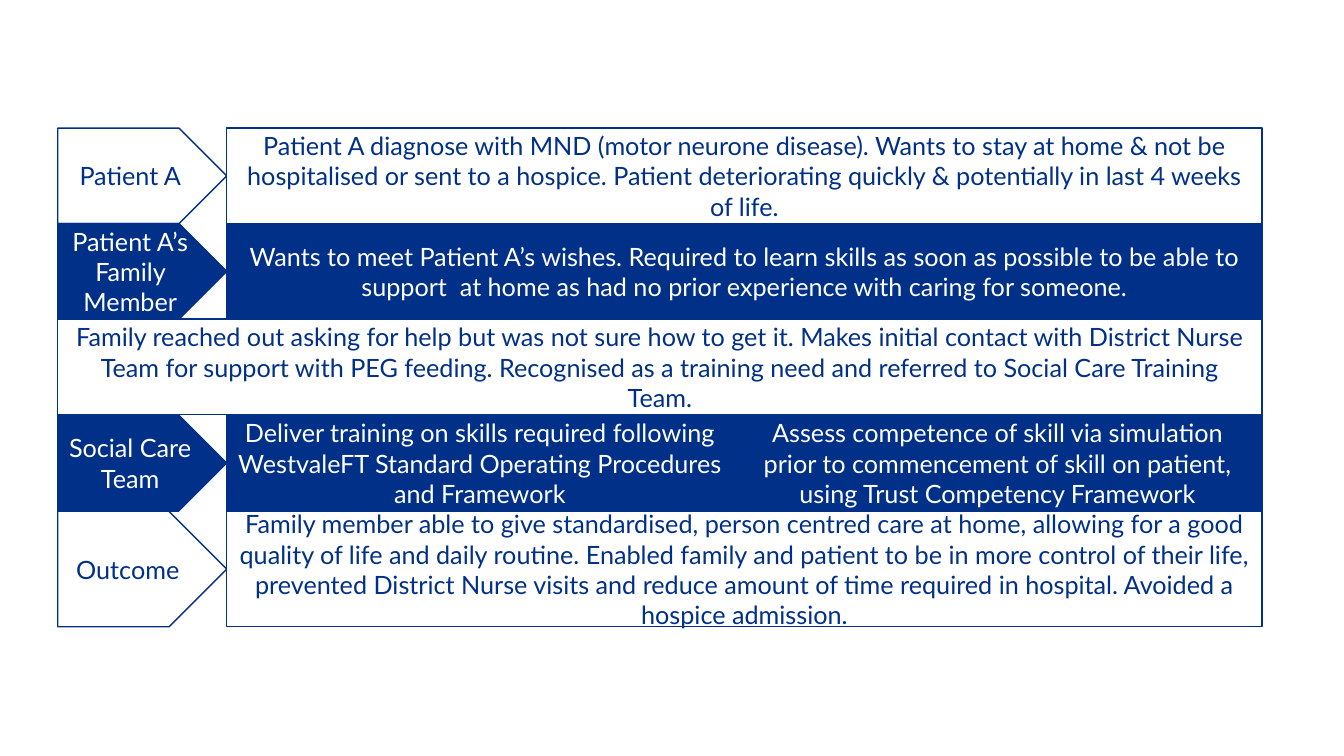
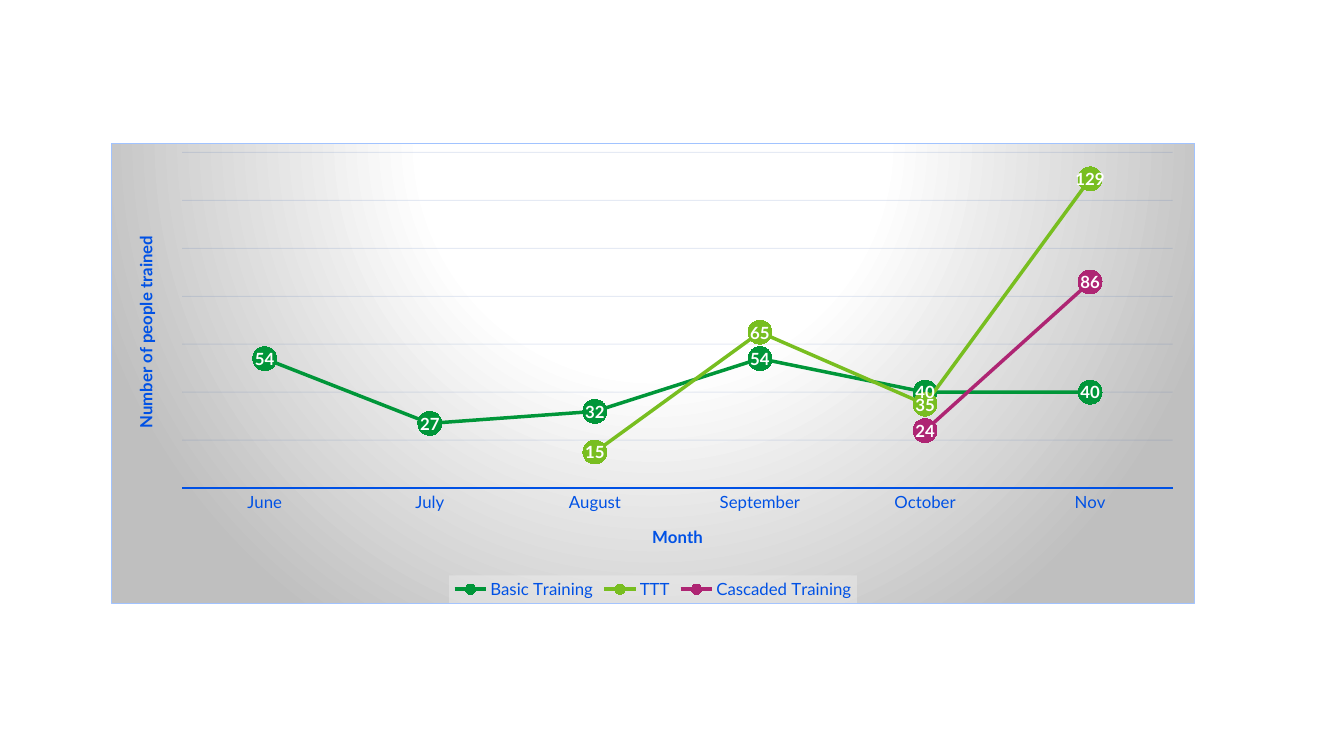
from lxml import etree
from pptx import Presentation
from pptx import util as u
from pptx.chart import data as chart_data
from pptx.dml.color import RGBColor
from pptx.enum import chart as ch, shapes, text
from pptx.oxml import parse_xml
from pptx.oxml.ns import nsdecls, qn

PX = 9525  # EMU per px, 96 px to the inch
FONT = "Lato"
COLORS = {
    "navy": "003087", "white": "FFFFFF", "blue": "0051E5", "grid": "00379A",
    "border": "A1C3FF", "shade": "BFBFBF", "legend": "F2F2F2",
    "green": "009639", "lime": "78BE20", "plum": "AE2573",
}


def px(length):
    return u.Emu(length * PX)


def color(name):
    return RGBColor.from_string(COLORS[name])


class Deck:
    """Holds the style and the current slide."""

    def __init__(self):
        self.deck = Presentation()
        self.deck.slide_width, self.deck.slide_height = px(1280), px(720)
        self.page = None

    def add_page(self):
        self.page = self.deck.slides.add_slide(self.deck.slide_layouts[6])

    def style(self, font, size, name, bold=False):
        font.name, font.size, font.bold = FONT, u.Pt(size), bold
        font.color.rgb = color(name)

    def outline(self, line, name, width):
        line.color.rgb = color(name)
        line.width = u.Pt(width)

    def panel(self, kind, area, words, inverted):
        fill, ink = ("navy", "white") if inverted else ("white", "navy")
        box = self.page.shapes.add_shape(kind, *map(px, area))
        box.shadow.inherit = False
        box.fill.solid()
        box.fill.fore_color.rgb = color(fill)
        self.outline(box.line, "navy", 1)
        frame = box.text_frame
        frame.word_wrap = True
        frame.vertical_anchor = text.MSO_ANCHOR.MIDDLE
        para = frame.paragraphs[0]
        para.alignment = text.PP_ALIGN.CENTER
        span = para.add_run()
        span.text = words
        self.style(span.font, 18, ink)

    def axis_title(self, axis, words):
        para = axis.axis_title.text_frame.paragraphs[0]
        span = para.add_run()
        span.text = words
        self.style(span.font, 12, "blue", True)

    def line_chart(self, area, categories, series):
        data = chart_data.CategoryChartData()
        data.categories = categories
        for name, _, values in series:
            data.add_series(name, values)
        chart = self.page.shapes.add_chart(
            ch.XL_CHART_TYPE.LINE_MARKERS, *map(px, area), data).chart
        chart.has_title = False
        self.style(chart.font, 10, "navy")

        # Series, markers and value labels
        for line, (_, name, _) in zip(chart.plots[0].series, series):
            line.smooth = False
            self.outline(line.format.line, name, 2.5)
            line.marker.style = ch.XL_MARKER_STYLE.CIRCLE
            line.marker.size = 17
            line.marker.format.fill.solid()
            line.marker.format.fill.fore_color.rgb = color(name)
            line.marker.format.line.fill.background()
            labels = line.data_labels
            labels.show_value = True
            labels.position = ch.XL_LABEL_POSITION.CENTER
            self.style(labels.font, 12, "white", True)

        # Axes
        months, people = chart.category_axis, chart.value_axis
        months.major_tick_mark = ch.XL_TICK_MARK.NONE
        self.outline(months.format.line, "blue", 1.5)
        self.style(months.tick_labels.font, 12, "blue")
        self.axis_title(months, "Month")
        people.visible = False
        people.minimum_scale, people.maximum_scale = 0, 140
        people.major_unit = 20
        self.outline(people.major_gridlines.format.line, "grid", 0.75)
        self.axis_title(people, "Number of people trained")

        # Legend
        chart.has_legend = True
        chart.legend.position = ch.XL_LEGEND_POSITION.BOTTOM
        chart.legend.include_in_layout = False
        self.style(chart.legend.font, 12, "blue")
        self.chart_backdrop(chart.element)

    def chart_backdrop(self, root):
        """Sets what the chart objects do not offer: gradient, alpha, layout."""
        grid = next(root.iter(qn("c:majorGridlines")))
        for tint in grid.iter(qn("a:srgbClr")):
            etree.SubElement(tint, qn("a:alpha")).set("val", "10000")

        legend = next(root.iter(qn("c:legend")))
        legend.find(qn("c:overlay")).addnext(parse_xml(
            f'<c:spPr {nsdecls("c", "a")}><a:solidFill>'
            f'<a:srgbClr val="{COLORS["legend"]}"><a:alpha val="39000"/>'
            '</a:srgbClr></a:solidFill></c:spPr>'))

        stops = "".join(
            f'<a:gs pos="{place * 1000}"><a:srgbClr val="{COLORS[name]}"/></a:gs>'
            for place, name in ((0, "white"), (39, "white"), (100, "shade")))
        root.find(qn("c:chart")).addnext(parse_xml(
            f'<c:spPr {nsdecls("c", "a")}><a:gradFill><a:gsLst>{stops}</a:gsLst>'
            '<a:path path="circle"><a:fillToRect l="50000" t="-80000" '
            'r="50000" b="180000"/></a:path></a:gradFill>'
            f'<a:ln w="{u.Pt(0.75)}"><a:solidFill>'
            f'<a:srgbClr val="{COLORS["border"]}"/></a:solidFill></a:ln></c:spPr>'))

        plot = next(root.iter(qn("c:plotArea")))
        for layout in plot.findall(qn("c:layout")):
            plot.remove(layout)
        sides = (("x", 0.065), ("y", 0.02), ("w", 0.915), ("h", 0.73))
        places = "".join(f'<c:{side} val="{part}"/>' for side, part in sides)
        plot.insert(0, parse_xml(
            f'<c:layout {nsdecls("c")}><c:manualLayout>'
            '<c:layoutTarget val="inner"/><c:xMode val="edge"/>'
            f'<c:yMode val="edge"/>{places}</c:manualLayout></c:layout>'))


# Rows of the patient story: label, inverted colours, height, texts
STORY = [
    ("Patient A", False, 91, [
        "Patient A diagnose with MND (motor neurone disease). Wants to stay at "
        "home & not be hospitalised or sent to a hospice. Patient deteriorating "
        "quickly & potentially in last 4 weeks of life."]),
    ("Patient A’s Family Member", True, 91, [
        "Wants to meet Patient A’s wishes. Required to learn skills as soon as "
        "possible to be able to support  at home as had no prior experience "
        "with caring for someone."]),
    (None, False, 91, [
        "Family reached out asking for help but was not sure how to get it. "
        "Makes initial contact with District Nurse Team for support with PEG "
        "feeding. Recognised as a training need and referred to Social Care "
        "Training Team."]),
    ("Social Care Team", True, 92, [
        "Deliver training on skills required following WestvaleFT Standard "
        "Operating Procedures and Framework",
        "Assess competence of skill via simulation prior to commencement of "
        "skill on patient, using Trust Competency Framework"]),
    ("Outcome", False, 110, [
        "Family member able to give standardised, person centred care at home, "
        "allowing for a good quality of life and daily routine. Enabled family "
        "and patient to be in more control of their life, prevented District "
        "Nurse visits and reduce amount of time required in hospital. Avoided "
        "a hospice admission."]),
]
LEFT, BODY, SPLIT, RIGHT, TOP = 55, 216, 698, 1202, 122

MONTHS = ["June", "July", "August", "September", "October", "Nov"]
TRAINED = [
    ("Basic Training", "green", [54, 27, 32, 54, 40, 40]),
    ("TTT", "lime", [None, None, 15, 65, 35, 129]),
    ("Cascaded Training", "plum", [None, None, None, None, 24, 86]),
]


def story_page(deck):
    deck.add_page()
    arrow, block = shapes.MSO_SHAPE.PENTAGON, shapes.MSO_SHAPE.RECTANGLE
    top = TOP
    for label, inverted, height, texts in STORY:
        start = BODY if label else LEFT
        if label:
            deck.panel(arrow, (LEFT, top, BODY - LEFT, height), label, inverted)
        edges = [start, SPLIT, RIGHT] if len(texts) == 2 else [start, RIGHT]
        for left, right, words in zip(edges, edges[1:], texts):
            deck.panel(block, (left, top, right - left, height), words, inverted)
        top += height


def training_page(deck):
    deck.add_page()
    deck.line_chart((106, 136, 1032, 439), MONTHS, TRAINED)


def main():
    deck = Deck()
    story_page(deck)
    training_page(deck)
    deck.deck.save("out.pptx")


if __name__ == "__main__":
    main()
